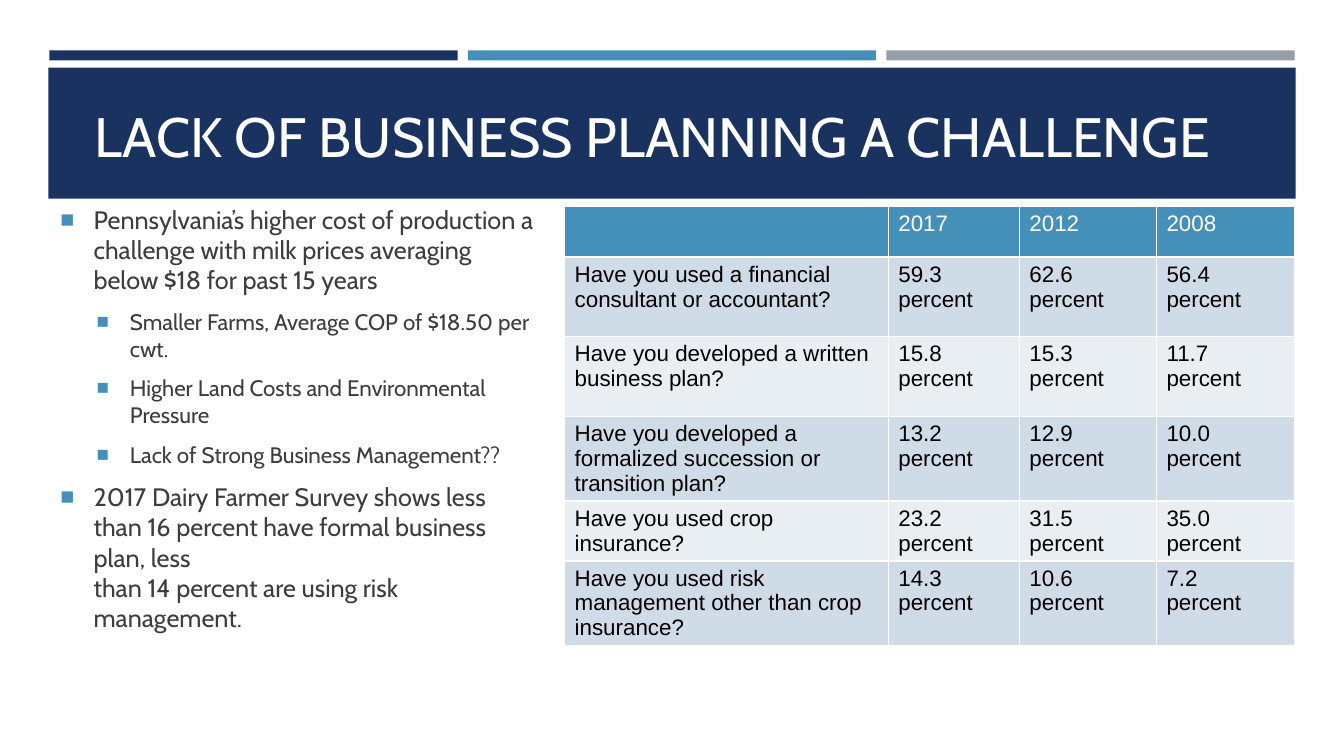
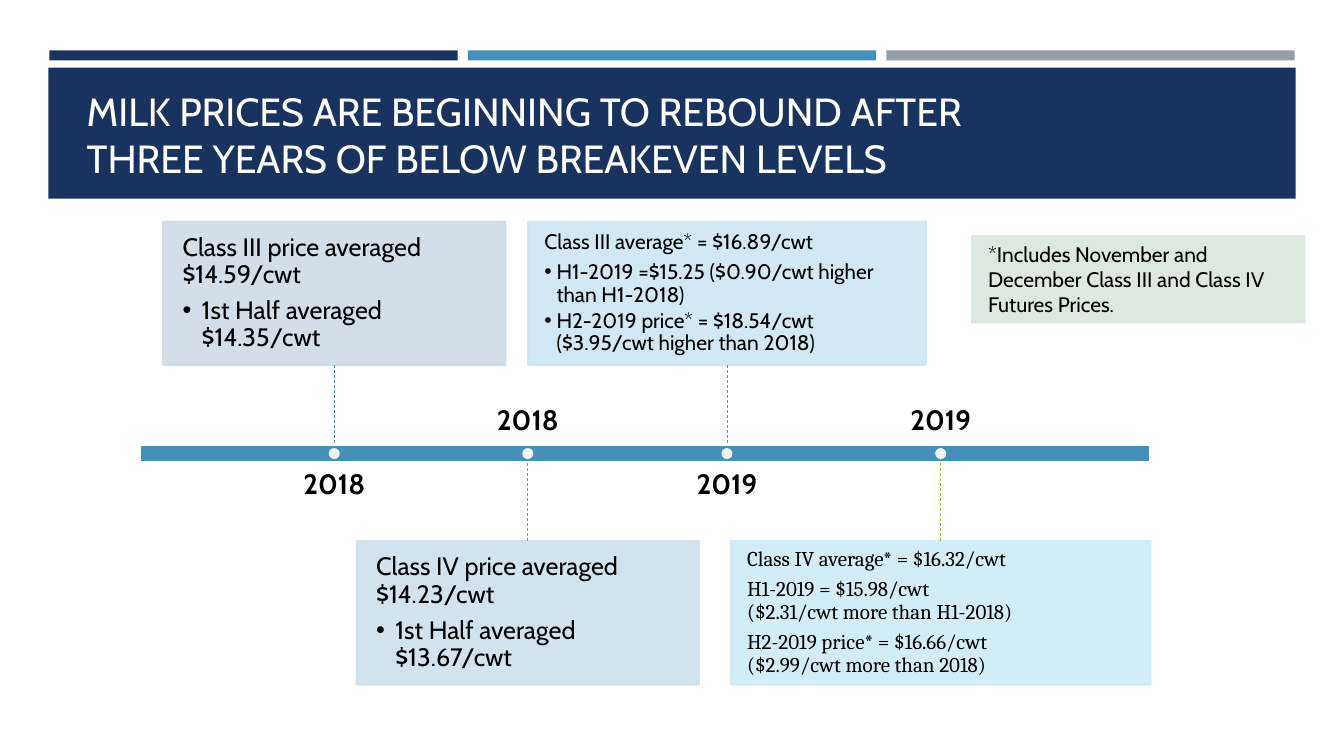
from copy import deepcopy
from dataclasses import dataclass

from lxml import etree
from pptx import Presentation
from pptx.dml.color import RGBColor
from pptx.enum.dml import MSO_LINE
from pptx.enum.shapes import MSO_CONNECTOR, MSO_SHAPE
from pptx.enum.text import MSO_ANCHOR, MSO_AUTO_SIZE, PP_ALIGN
from pptx.oxml.ns import qn
from pptx.presentation import Presentation as Deck
from pptx.shapes.autoshape import Shape
from pptx.slide import Slide, SlideLayout
from pptx.text.text import TextFrame
from pptx.util import Inches, Pt

NAVY = RGBColor(0x1A, 0x32, 0x60)
BLUE = RGBColor(0x45, 0x90, 0xB8)
GRAY = RGBColor(0x96, 0x9F, 0xA7)
WHITE = RGBColor(0xFF, 0xFF, 0xFF)
BLACK = RGBColor(0x00, 0x00, 0x00)
CHARCOAL = RGBColor(0x3D, 0x3D, 0x3D)
ROW_DARK = RGBColor(0xCF, 0xDB, 0xE6)
ROW_LIGHT = RGBColor(0xE9, 0xEE, 0xF3)
SKY = RGBColor(0xCE, 0xE0, 0xEC)
PALE_BLUE = RGBColor(0xCE, 0xE6, 0xF1)
PALE_CYAN = RGBColor(0xCF, 0xEC, 0xF6)
PALE_GREEN = RGBColor(0xDA, 0xE6, 0xDB)
TEAL = RGBColor(0x43, 0xB6, 0x8F)
GREEN = RGBColor(0x44, 0xB5, 0x41)
OLIVE = RGBColor(0x92, 0xB3, 0x3F)

RECTANGLE = MSO_SHAPE.RECTANGLE
OVAL = MSO_SHAPE.OVAL
STRAIGHT = MSO_CONNECTOR.STRAIGHT
DASH = MSO_LINE.DASH
TOP, MIDDLE, BOTTOM = MSO_ANCHOR.TOP, MSO_ANCHOR.MIDDLE, MSO_ANCHOR.BOTTOM
LEFT, CENTER = PP_ALIGN.LEFT, PP_ALIGN.CENTER
NO_AUTOFIT = MSO_AUTO_SIZE.NONE

TITLE_FONT = "Cabin"
TABLE_FONT = "Arial"
TITLE_ONLY = 5
BOX_HEIGHT = 1.42
BAR_TOP, BAR_HEIGHT = 4.41, 0.18
DOT_SIZE = 0.11
YEAR_WIDTH, YEAR_HEIGHT = 3.08, 0.52


@dataclass(frozen=True)
class Item:
    text: str
    level: int = 0


@dataclass(frozen=True)
class Milestone:
    year: str
    left: float
    width: float
    above: bool
    fill: RGBColor
    line: RGBColor
    items: tuple[Item, ...]
    size: float = 18
    inset: float = 0.19
    hanging: float = 0.19
    font: str = TITLE_FONT


PLANNING_POINTS = (
    Item("Pennsylvania’s higher cost of production a challenge with milk prices averaging below $18 for past 15 years"),
    Item("Smaller Farms, Average COP of $18.50 per cwt.", 1),
    Item("Higher Land Costs and Environmental Pressure", 1),
    Item("Lack of Strong Business Management??", 1),
    Item("2017 Dairy Farmer Survey shows less than 16 percent have formal business plan, less\n"
         "than 14 percent are using risk management."),
)

SURVEY_ROWS = (
    ("", "2017", "2012", "2008"),
    ("Have you used a financial consultant or accountant?", "59.3 percent", "62.6 percent", "56.4 percent"),
    ("Have you developed a written business plan?", "15.8 percent", "15.3 percent", "11.7 percent"),
    ("Have you developed a formalized succession or transition plan?",
     "13.2 percent", "12.9 percent", "10.0 percent"),
    ("Have you used crop insurance?", "23.2 percent", "31.5 percent", "35.0 percent"),
    ("Have you used risk management other than crop insurance?", "14.3 percent", "10.6 percent", "7.2\npercent"),
)
SURVEY_WIDTHS = (3.21, 1.3, 1.36, 1.37)
SURVEY_HEIGHTS = (0.5, 0.79, 0.79, 0.79, 0.5, 0.79)

MILESTONES = (
    Milestone("2018", 1.62, 3.39, True, ROW_DARK, BLUE, (
        Item("Class III price averaged $14.59/cwt"),
        Item("1st Half averaged $14.35/cwt", 1))),
    Milestone("2018", 3.54, 3.39, False, SKY, TEAL, (
        Item("Class IV price averaged $14.23/cwt"),
        Item("1st Half averaged $13.67/cwt", 1))),
    Milestone("2019", 5.24, 3.94, True, PALE_BLUE, GREEN, (
        Item("Class III average* = $16.89/cwt"),
        Item("H1-2019 =$15.25 ($0.90/cwt higher than H1-2018)", 1),
        Item("H2-2019 price* = $18.54/cwt ($3.95/cwt higher than 2018)", 1)),
        size=15, inset=0.16, hanging=0.12),
    Milestone("2019", 7.25, 4.16, False, PALE_CYAN, OLIVE, (
        Item("Class IV average* = $16.32/cwt"),
        Item("H1-2019 = $15.98/cwt\n($2.31/cwt more than H1-2018)"),
        Item("H2-2019 price* = $16.66/cwt\n($2.99/cwt more than 2018)")),
        size=15, inset=0.16, font="Cambria"),
)


def write_paragraph(frame: TextFrame, text: str, *, size: float, color: RGBColor = BLACK,
                    font: str = TITLE_FONT, bold: bool = False, alignment: PP_ALIGN = LEFT,
                    line_spacing: float = 1.0, space_before: float = 0, space_after: float = 0,
                    bullet: str = "", bullet_color: RGBColor = BLACK, bullet_percent: int = 100,
                    indent: float = 0, hanging: float = 0) -> None:
    paragraph = frame.paragraphs[0]
    if paragraph.runs:
        paragraph = frame.add_paragraph()
    paragraph.text = text
    paragraph.alignment = alignment
    paragraph.line_spacing = line_spacing
    paragraph.space_before = Pt(space_before)
    paragraph.space_after = Pt(space_after)
    for run in paragraph.runs:
        run.font.name = font
        run.font.size = Pt(size)
        run.font.bold = bold
        run.font.color.rgb = color
    for line_break in paragraph._p.findall(qn("a:br")):
        line_break.append(deepcopy(paragraph.runs[0]._r.rPr))
    if bullet:
        properties = paragraph._p.get_or_add_pPr()
        properties.set("marL", str(Inches(indent)))
        properties.set("indent", str(-Inches(hanging)))
        bullet_fill = etree.SubElement(properties, qn("a:buClr"))
        etree.SubElement(bullet_fill, qn("a:srgbClr"), val=str(bullet_color))
        etree.SubElement(properties, qn("a:buSzPct"), val=str(bullet_percent * 1000))
        etree.SubElement(properties, qn("a:buFont"), typeface=TABLE_FONT)
        etree.SubElement(properties, qn("a:buChar"), char=bullet)


def format_frame(frame: TextFrame, anchor: MSO_ANCHOR, horizontal: float = 0.1, vertical: float = 0.05) -> None:
    frame.word_wrap = True
    frame.auto_size = NO_AUTOFIT
    frame.vertical_anchor = anchor
    frame.margin_left = frame.margin_right = Inches(horizontal)
    frame.margin_top = frame.margin_bottom = Inches(vertical)


def add_box(slide: Slide, left: float, top: float, width: float, height: float, fill: RGBColor, *,
            kind: MSO_SHAPE = RECTANGLE, line: RGBColor | None = None, line_width: float = 1,
            opacity: int = 100) -> Shape:
    shape = slide.shapes.add_shape(kind, Inches(left), Inches(top), Inches(width), Inches(height))
    shape.shadow.inherit = False
    shape.fill.solid()
    shape.fill.fore_color.rgb = fill
    if line is None:
        shape.line.fill.background()
    else:
        shape.line.color.rgb = line
        shape.line.width = Pt(line_width)
    if opacity < 100:
        for color in shape._element.spPr.iter(qn("a:srgbClr")):
            etree.SubElement(color, qn("a:alpha"), val=str(opacity * 1000))
    return shape


def add_text_frame(slide: Slide, left: float, top: float, width: float, height: float) -> TextFrame:
    return slide.shapes.add_textbox(Inches(left), Inches(top), Inches(width), Inches(height)).text_frame


def move_bands_to_layout(slide: Slide, layout: SlideLayout) -> None:
    bands = [add_box(slide, 0.49 + 4.15 * column, 0.5, 4.05, 0.1, color)
             for column, color in enumerate((NAVY, BLUE, GRAY))]
    bands.append(add_box(slide, 0.48, 0.67, 12.37, 1.3, NAVY))
    for index, band in enumerate(bands):
        band._element.nvSpPr.cNvPr.set("id", str(100 + index))
        layout.shapes._spTree.insert(2 + index, band._element)


def set_title(slide: Slide, text: str, left: float, top: float, width: float, height: float, size: float) -> None:
    title = slide.shapes.title
    title.left, title.top = Inches(left), Inches(top)
    title.width, title.height = Inches(width), Inches(height)
    format_frame(title.text_frame, BOTTOM)
    write_paragraph(title.text_frame, text, size=size, color=WHITE)


def add_survey_table(slide: Slide) -> None:
    table = slide.shapes.add_table(len(SURVEY_ROWS), len(SURVEY_WIDTHS), Inches(5.6), Inches(2.05),
                                   Inches(sum(SURVEY_WIDTHS)), Inches(sum(SURVEY_HEIGHTS))).table
    for column, width in zip(table.columns, SURVEY_WIDTHS):
        column.width = Inches(width)
    for row_index, (row, height) in enumerate(zip(SURVEY_ROWS, SURVEY_HEIGHTS)):
        table.rows[row_index].height = Inches(height)
        header = row_index == 0
        fill = BLUE if header else ROW_DARK if row_index % 2 else ROW_LIGHT
        for column_index, text in enumerate(row):
            cell = table.cell(row_index, column_index)
            cell.fill.solid()
            cell.fill.fore_color.rgb = fill
            write_paragraph(cell.text_frame, text, size=16, font=TABLE_FONT, color=WHITE if header else BLACK)


def add_milestone(slide: Slide, milestone: Milestone) -> None:
    center = milestone.left + milestone.width / 2
    box = add_box(slide, milestone.left, 2.2 if milestone.above else 5.37, milestone.width, BOX_HEIGHT,
                  milestone.fill, line=milestone.fill, line_width=1.75, opacity=90)
    format_frame(box.text_frame, MIDDLE, milestone.inset, milestone.inset)
    for item in milestone.items:
        write_paragraph(box.text_frame, item.text, size=milestone.size, font=milestone.font, line_spacing=0.9,
                        space_after=milestone.size * (0.15 if item.level else 0.35),
                        bullet="•" if item.level else "", indent=milestone.hanging, hanging=milestone.hanging)

    bar_edge = Inches(BAR_TOP if milestone.above else BAR_TOP + BAR_HEIGHT)
    connector = slide.shapes.add_connector(STRAIGHT, Inches(center), bar_edge, Inches(center), bar_edge)
    connector.begin_connect(box, 2 if milestone.above else 0)
    connector.line.color.rgb = milestone.line
    connector.line.width = Pt(0.5)
    connector.line.dash_style = DASH
    etree.SubElement(connector._element.spPr, qn("a:effectLst"))

    add_box(slide, center - DOT_SIZE / 2, BAR_TOP + (BAR_HEIGHT - DOT_SIZE) / 2, DOT_SIZE, DOT_SIZE, WHITE,
            kind=OVAL, opacity=90)
    year = add_text_frame(slide, center - YEAR_WIDTH / 2, 4.67 if milestone.above else 3.81,
                          YEAR_WIDTH, YEAR_HEIGHT)
    format_frame(year, TOP if milestone.above else BOTTOM, 0, 0)
    write_paragraph(year, milestone.year, size=20, bold=True, alignment=CENTER, line_spacing=0.9, space_after=7)


def build_planning_slide(slide: Slide) -> None:
    set_title(slide, "LACK OF BUSINESS PLANNING A CHALLENGE", 0.84, 0.87, 11.7, 0.85, 39.6)
    points = add_text_frame(slide, 0.5, 1.49, 4.92, 5.32)
    format_frame(points, MIDDLE)
    for item in PLANNING_POINTS:
        size = 16 if item.level else 18
        write_paragraph(points, item.text, size=size, color=CHARCOAL, space_before=size * 0.2, space_after=6,
                        bullet="■", bullet_color=BLUE, bullet_percent=92,
                        indent=0.33 + 0.36 * item.level, hanging=0.33)
    add_survey_table(slide)


def build_price_slide(slide: Slide) -> None:
    set_title(slide, "MILK PRICES ARE BEGINNING TO REBOUND AFTER\nTHREE YEARS OF BELOW BREAKEVEN LEVELS",
              0.76, 0.4, 11.22, 1.45, 28)
    add_box(slide, 1.38, BAR_TOP, 10.03, BAR_HEIGHT, BLUE, line=WHITE, line_width=2)
    for milestone in MILESTONES:
        add_milestone(slide, milestone)
    note = add_box(slide, 9.64, 2.34, 3.3, 0.86, PALE_GREEN, line=PALE_GREEN, line_width=1.1, opacity=90)
    format_frame(note.text_frame, MIDDLE, 0.16, 0.16)
    write_paragraph(note.text_frame, "*Includes November and December Class III and Class IV Futures Prices.", size=15)


def main() -> None:
    presentation: Deck = Presentation()
    presentation.slide_width, presentation.slide_height = Inches(13.33), Inches(7.5)
    layout = presentation.slide_layouts[TITLE_ONLY]
    planning_slide = presentation.slides.add_slide(layout)
    move_bands_to_layout(planning_slide, layout)
    build_planning_slide(planning_slide)
    build_price_slide(presentation.slides.add_slide(layout))
    presentation.save("out.pptx")


if __name__ == "__main__":
    main()
